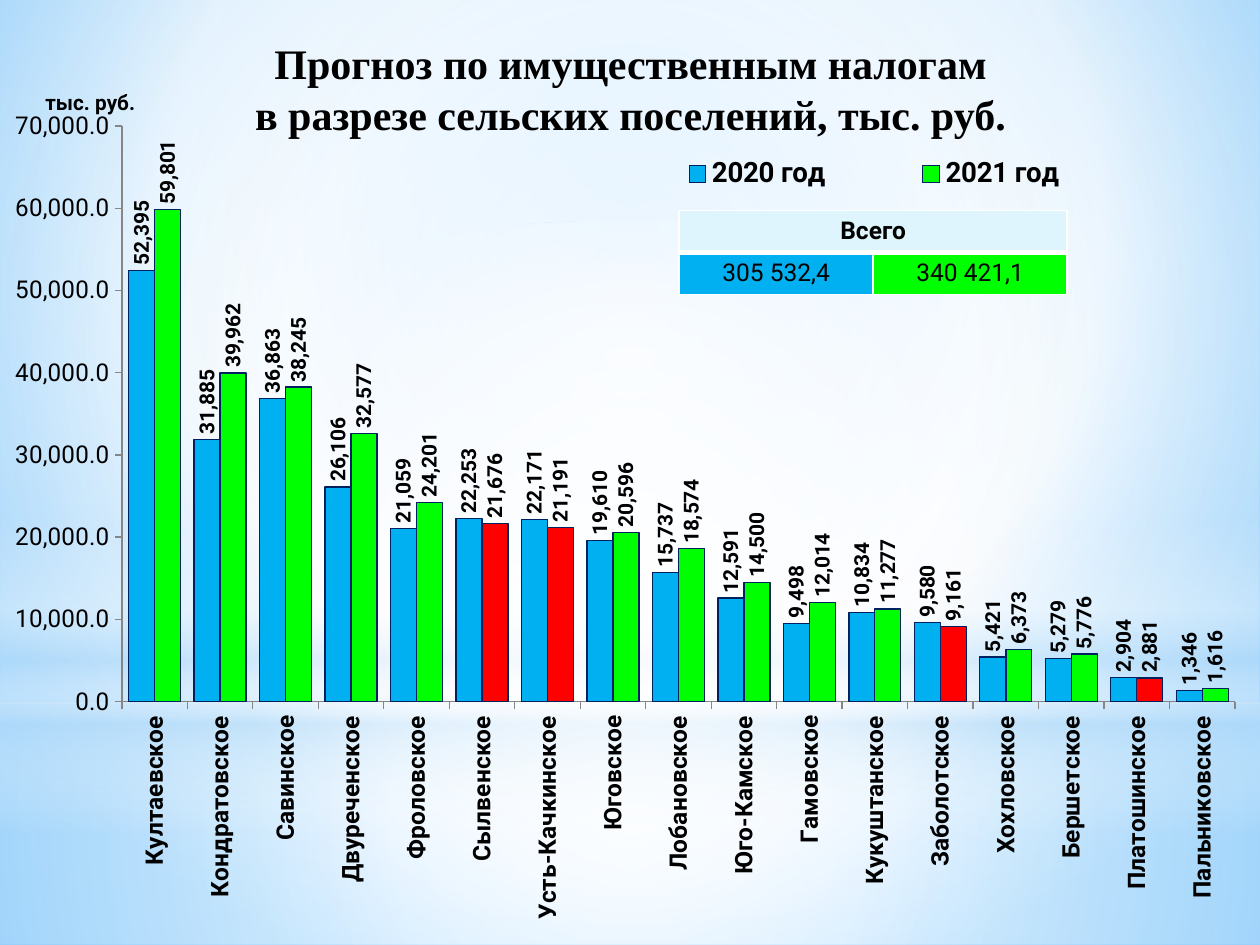
from lxml.etree import SubElement
from pptx import Presentation
from pptx.chart.data import CategoryChartData
from pptx.dml.color import RGBColor
from pptx.enum.chart import XL_CHART_TYPE, XL_LABEL_POSITION, XL_LEGEND_POSITION, XL_TICK_MARK
from pptx.enum.shapes import MSO_SHAPE
from pptx.enum.text import PP_ALIGN
from pptx.oxml.ns import qn
from pptx.util import Inches, Pt

WIDE, HIGH = 10, 7.5
BLUE, GREEN, RED, SKY = "00B0F0", "00FF00", "FF0000", "B4DCFA"
SANS, SERIF = "Roboto", "Times New Roman"
ROWS = [
    ("Култаевское", 52395, 59801), ("Кондратовское", 31885, 39962),
    ("Савинское", 36863, 38245), ("Двуреченское", 26106, 32577),
    ("Фроловское", 21059, 24201), ("Сылвенское", 22253, 21676),
    ("Усть-Качкинское", 22171, 21191), ("Юговское", 19610, 20596),
    ("Лобановское", 15737, 18574), ("Юго-Камское", 12591, 14500),
    ("Гамовское", 9498, 12014), ("Кукуштанское", 10834, 11277),
    ("Заболотское", 9580, 9161), ("Хохловское", 5421, 6373),
    ("Бершетское", 5279, 5776), ("Платошинское", 2904, 2881),
    ("Пальниковское", 1346, 1616),
]


def color(code):
    return RGBColor.from_string(code)


def box(*sides):
    return [Inches(side) for side in sides]


def style(font, size, bold=False, name=SANS):
    font.size, font.bold, font.name = Pt(size), bold, name
    font.color.rgb = color("000000")


def blend(host, stops, angle=None, focus=(50, 50, 50, 50)):
    """Swap the noFill in host for a gradient of (place, colour, opacity) stops."""
    old = host.find(qn("a:noFill"))
    grad = old.makeelement(qn("a:gradFill"), {"rotWithShape": "1"})
    host.replace(old, grad)
    chain = SubElement(grad, qn("a:gsLst"))
    for place, code, alpha in stops:
        stop = SubElement(chain, qn("a:gs"), pos=str(place * 1000))
        tint = SubElement(stop, qn("a:srgbClr"), val=code)
        if alpha < 100:
            SubElement(tint, qn("a:alpha"), val=str(alpha * 1000))
    if angle is not None:
        SubElement(grad, qn("a:lin"), ang=str(angle * 60000), scaled="0")
    else:
        path = SubElement(grad, qn("a:path"), path="circle")
        SubElement(path, qn("a:fillToRect"),
                   {side: str(part * 1000) for side, part in zip("ltrb", focus)})


def add_glow(slide, kind, top, tall, stops, angle=None):
    glow = slide.shapes.add_shape(kind, *box(0, top, WIDE, tall))
    glow.shadow.inherit = False
    glow.line.fill.background()
    glow.fill.background()
    blend(glow.element.spPr, stops, angle)


def add_sky(slide):
    slide.background.fill.background()
    blend(slide.element.find(".//" + qn("p:bgPr")),
          [(0, "9ED5FF", 100), (60, "FFFFFF", 100), (100, "5BB9FF", 100)],
          focus=(20, 10, 20, 60))
    rect, split = MSO_SHAPE.RECTANGLE, 5.58
    add_glow(slide, rect, split, HIGH - split,
             [(0, "FFFFFF", 91), (37, "FFFFFF", 76), (100, SKY, 79)])
    add_glow(slide, rect, 0, split,
             [(0, "FFFFFF", 89), (48, "FFFFFF", 62), (100, SKY, 79)])
    add_glow(slide, rect, 4.12, HIGH / 3,
             [(0, "FFFFFF", 0), (29, "FFFFFF", 30), (45, SKY, 40),
              (55, "FFFFFF", 26), (65, SKY, 60), (100, "FFFFFF", 0)], 90)
    add_glow(slide, MSO_SHAPE.OVAL, 1.75, split,
             [(0, "FFFFFF", 100), (56, "FFFFFF", 0)])


def add_title(slide, text):
    frame = slide.shapes.add_textbox(*box(0.2, 0.21, 9.61, 0.63)).text_frame
    frame.word_wrap = True
    frame.margin_top = Inches(0.09)
    frame.text = text
    line = frame.paragraphs[0]
    line.alignment = PP_ALIGN.CENTER
    style(line.font, 24, True, SERIF)


def place(host, index, inner=False, **shares):
    """Set a manual layout, as shares of the chart, at the given child index."""
    for old in host.findall(qn("c:layout")):
        host.remove(old)
    layout = host.makeelement(qn("c:layout"))
    host.insert(index, layout)
    manual = SubElement(layout, qn("c:manualLayout"))
    if inner:
        SubElement(manual, qn("c:layoutTarget"), val="inner")
    for key in "xy":
        SubElement(manual, qn(f"c:{key}Mode"), val="edge")
    for key, share in shares.items():
        SubElement(manual, qn(f"c:{key}"), val=str(share))


def dress_axis(axis, bold):
    axis.has_major_gridlines = False
    axis.major_tick_mark = XL_TICK_MARK.OUTSIDE
    axis.format.line.color.rgb = color("868686")
    style(axis.tick_labels.font, 14, bold)


def dress_bars(series, code):
    def paint(form, code):
        form.fill.solid()
        form.fill.fore_color.rgb = color(code)
        form.line.color.rgb = color("002060")
        form.line.width = Pt(0.75)

    paint(series.format, code)
    series.invert_if_negative = False
    tags = series.data_labels
    tags.show_value = True
    tags.number_format, tags.number_format_is_linked = "#,##0", False
    tags.position = XL_LABEL_POSITION.OUTSIDE_END
    style(tags.font, 12, True)
    if code == GREEN:
        for spot, (_, before, after) in enumerate(ROWS):
            if after < before:
                paint(series.points[spot].format, RED)


def add_bars(slide):
    names, first, second = zip(*ROWS)
    data = CategoryChartData()
    data.categories = names
    data.add_series("2020 год", first)
    data.add_series("2021 год", second)
    chart = slide.shapes.add_chart(XL_CHART_TYPE.COLUMN_CLUSTERED,
                                   *box(0.12, 0.6, 9.76, 6.77), data).chart
    chart.has_title = False
    style(chart.font, 18)
    plot = chart.plots[0]
    plot.gap_width, plot.overlap, plot.vary_by_categories = 52, 0, False
    for series, code in zip(plot.series, (BLUE, GREEN)):
        dress_bars(series, code)

    dress_axis(chart.category_axis, True)
    axis = chart.value_axis
    dress_axis(axis, False)
    axis.minimum_scale, axis.maximum_scale, axis.major_unit = 0, 70000, 10000
    axis.tick_labels.number_format = "#,##0.0"
    axis.tick_labels.number_format_is_linked = False
    frame = axis.axis_title.text_frame
    frame.text = "тыс. руб."
    style(frame.paragraphs[0].font, 12, True)

    chart.has_legend = True
    chart.legend.position = XL_LEGEND_POSITION.BOTTOM
    chart.legend.include_in_layout = False
    style(chart.legend.font, 16, True)

    root = chart.element
    for body in root.xpath(".//c:catAx//a:bodyPr | .//c:dLbls//a:bodyPr"):
        body.set("rot", "-5400000")
        body.set("vert", "horz")
    for body in root.xpath(".//c:valAx/c:title//a:bodyPr"):
        body.set("rot", "0")
        body.set("vert", "horz")
    place(root.xpath(".//c:plotArea")[0], 0, True, x=0.076, y=0.059, w=0.916, h=0.675)
    place(root.xpath(".//c:valAx/c:title")[0], 1, x=0.01, y=0.01)
    place(root.xpath(".//c:legend")[0], 1, x=0.47, y=0.09, w=0.45, h=0.05)


def fill_cell(cell, text, code, bold=False, base=1):
    cell.text = text
    cell.fill.solid()
    cell.fill.fore_color.rgb = color(code)
    line = cell.text_frame.paragraphs[0]
    line.alignment = PP_ALIGN.CENTER
    style(line.font, 14, bold)
    props = cell.fill._xPr
    for spot, side in enumerate("LRTB"):
        width = Pt(base if side == "B" else 1)
        edge = props.makeelement(qn(f"a:ln{side}"), {"w": str(width)})
        props.insert(spot, edge)
        paint = SubElement(edge, qn("a:solidFill"))
        SubElement(paint, qn("a:srgbClr"), val="FFFFFF")


def add_totals(slide):
    table = slide.shapes.add_table(2, 2, *box(5.39, 1.67, 3.08, 0.66)).table
    table.first_row = table.horz_banding = False
    head = table.cell(0, 0)
    head.merge(table.cell(0, 1))
    fill_cell(head, "Всего", "DFF5FD", True, 3)
    fill_cell(table.cell(1, 0), "305 532,4", BLUE)
    fill_cell(table.cell(1, 1), "340 421,1", GREEN)


def main():
    deck = Presentation()
    deck.slide_width, deck.slide_height = box(WIDE, HIGH)
    slide = deck.slides.add_slide(deck.slide_layouts[6])
    add_sky(slide)
    add_title(slide, "Прогноз по имущественным налогам\vв разрезе сельских поселений, тыс. руб.")
    add_bars(slide)
    add_totals(slide)
    deck.save("out.pptx")


if __name__ == "__main__":
    main()
